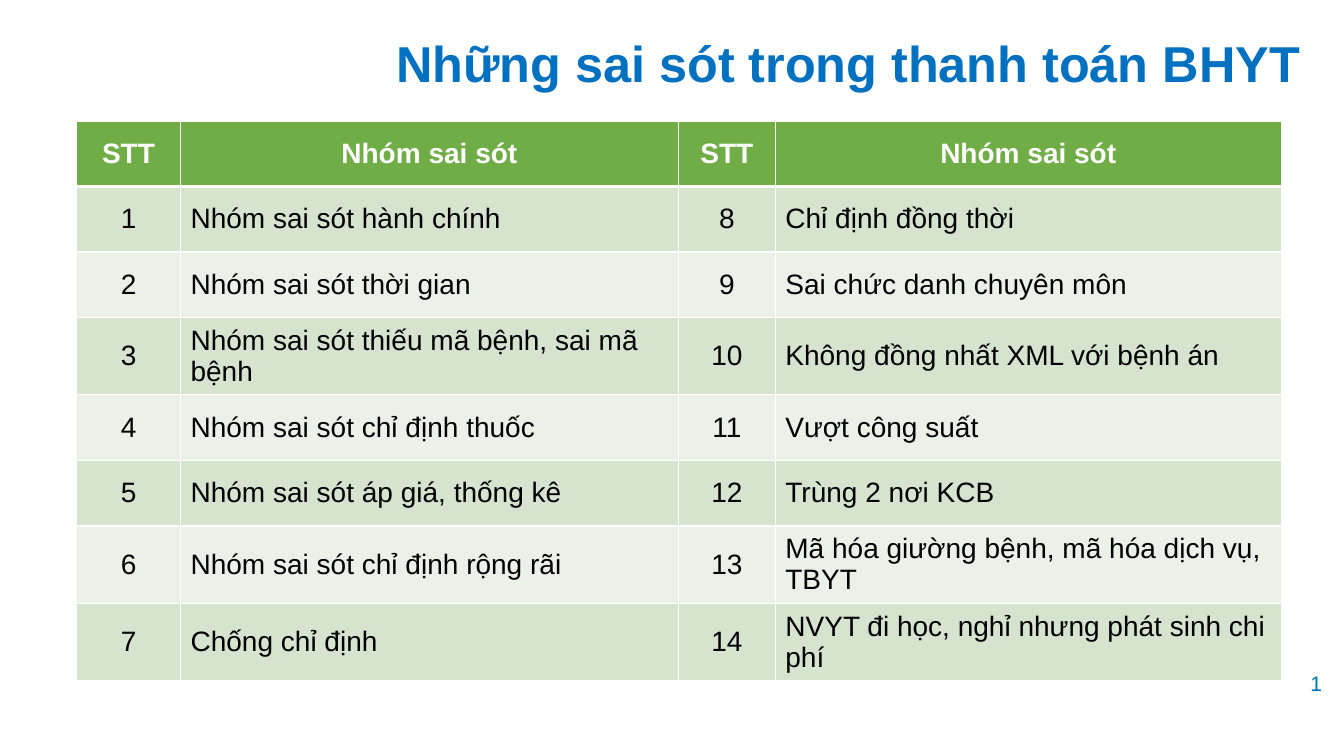
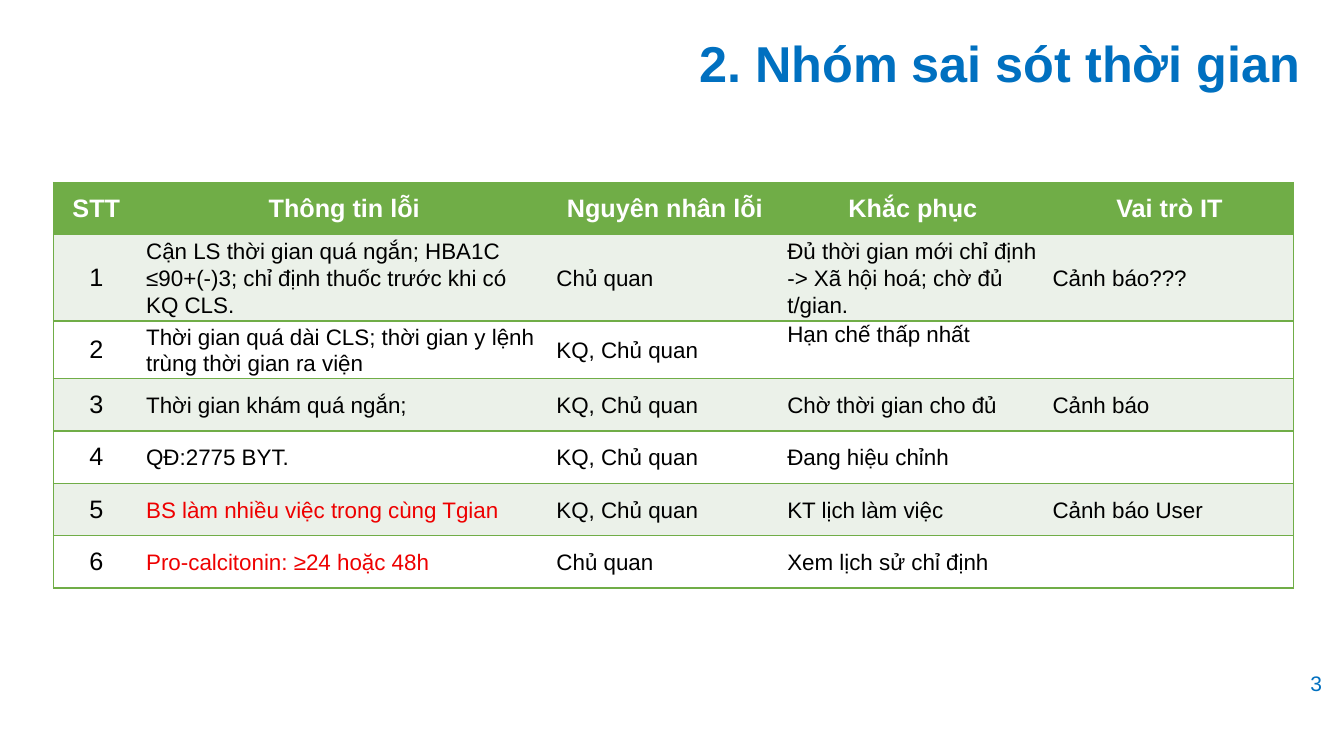
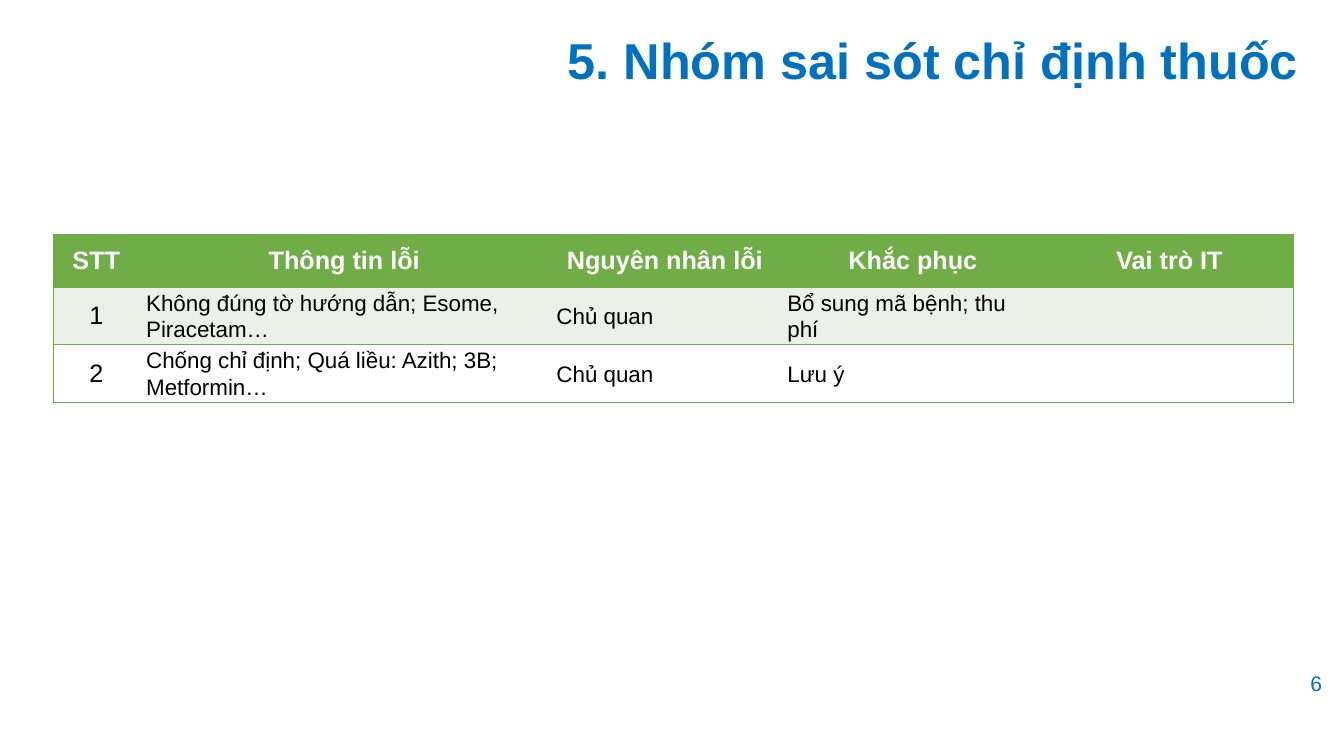
"""Build three slides on common errors in health insurance payment claims."""
from lxml import etree
from pptx import Presentation
from pptx.dml.color import RGBColor
from pptx.enum.text import MSO_ANCHOR, PP_ALIGN
from pptx.oxml.ns import qn
from pptx.util import Inches, Pt

LEFT, CENTER, RIGHT = PP_ALIGN.LEFT, PP_ALIGN.CENTER, PP_ALIGN.RIGHT
TOP, MIDDLE = MSO_ANCHOR.TOP, MSO_ANCHOR.MIDDLE

BLUE = RGBColor(0x00, 0x70, 0xC0)
GREEN = RGBColor(0x70, 0xAD, 0x47)
MID_GREEN = RGBColor(0xD5, 0xE3, 0xCF)
PALE_GREEN = RGBColor(0xEB, 0xF1, 0xE9)
WHITE = RGBColor(0xFF, 0xFF, 0xFF)
BLACK = RGBColor(0x00, 0x00, 0x00)
RED = RGBColor(0xEE, 0x00, 0x00)

TITLE_FONT = {"size": Pt(36), "bold": True}
NUMBER_FONT = {"size": Pt(15), "bold": False}
TIGHT_MARGINS = {
    "margin_left": Inches(0.07), "margin_right": Inches(0.07),
    "margin_top": 0, "margin_bottom": 0,
}

GROUPS = [
    "Nhóm sai sót hành chính",
    "Nhóm sai sót thời gian",
    "Nhóm sai sót thiếu mã bệnh, sai mã bệnh",
    "Nhóm sai sót chỉ định thuốc",
    "Nhóm sai sót áp giá, thống kê",
    "Nhóm sai sót chỉ định rộng rãi",
    "Chống chỉ định",
    "Chỉ định đồng thời",
    "Sai chức danh chuyên môn",
    "Không đồng nhất XML với bệnh án",
    "Vượt công suất",
    "Trùng 2 nơi KCB",
    "Mã hóa giường bệnh, mã hóa dịch vụ, TBYT",
    "NVYT đi học, nghỉ nhưng phát sinh chi phí",
]
ERROR_HEADINGS = ["STT", "Thông tin lỗi", "Nguyên nhân lỗi", "Khắc phục", "Vai trò IT"]
TIME_ERRORS = [
    ["Cận LS thời gian quá ngắn; HBA1C ≤90+(-)3; chỉ định thuốc trước khi có KQ CLS.",
     "Chủ quan", "Đủ thời gian mới chỉ định -> Xã hội hoá; chờ đủ t/gian.", "Cảnh báo???"],
    ["Thời gian quá dài CLS; thời gian y lệnh trùng thời gian ra viện",
     "KQ, Chủ quan", "Hạn chế thấp nhất", ""],
    ["Thời gian khám quá ngắn;", "KQ, Chủ quan", "Chờ thời gian cho đủ", "Cảnh báo"],
    ["QĐ:2775 BYT.", "KQ, Chủ quan", "Đang hiệu chỉnh", ""],
    ["BS làm nhiều việc trong cùng Tgian", "KQ, Chủ quan", "KT lịch làm việc",
     "Cảnh báo User"],
    ["Pro-calcitonin: ≥24 hoặc 48h", "Chủ quan", "Xem lịch sử chỉ định", ""],
]
DRUG_ERRORS = [
    ["Không đúng tờ hướng dẫn; Esome, Piracetam…", "Chủ quan",
     "Bổ sung mã bệnh; thu phí", ""],
    ["Chống chỉ định; Quá liều: Azith; 3B; Metformin…", "Chủ quan", "Lưu ý", ""],
]
RED_ROWS = (5, 6)
TOP_ALIGNED_TEXT = "Hạn chế thấp nhất"


def apply(target, values):
    """Set each named attribute on the target."""
    for name, value in values.items():
        setattr(target, name, value)


def write(frame, text, align, color, font):
    """Write one formatted paragraph and return it."""
    paragraph = frame.paragraphs[0]
    paragraph.alignment = align
    run = paragraph.add_run()
    run.text = text
    apply(run.font, {"name": "Arial", **font})
    run.font.color.rgb = color
    return paragraph


def add_text(slide, place, text, align, anchor, font):
    """Add a blue text box."""
    frame = slide.shapes.add_textbox(*map(Inches, place)).text_frame
    apply(frame, {"word_wrap": True, "vertical_anchor": anchor, "margin_top": Inches(0.1),
                  "margin_bottom": Inches(0.1)})
    write(frame, text, align, BLUE, font)


def add_page(deck, title, number, title_place=(2.66, 0.22, 10.34, 0.76)):
    """Add a slide with its title and page number."""
    slide = deck.slides.add_slide(deck.slide_layouts[6])
    add_text(slide, (12.78, 6.58, 0.55, 0.39), number, CENTER, MIDDLE, NUMBER_FONT)
    add_text(slide, title_place, title, RIGHT, TOP, TITLE_FONT)
    return slide


def set_borders(cell, borders):
    """Draw the four cell borders; a missing side has no line."""
    properties = cell._tc.get_or_add_tcPr()
    for side in "LRTB":
        color, width = borders.get(side, (None, 1))
        line = etree.SubElement(properties, qn(f"a:ln{side}"), w=str(Pt(width)))
        if color is None:
            etree.SubElement(line, qn("a:noFill"))
        else:
            fill = etree.SubElement(line, qn("a:solidFill"))
            etree.SubElement(fill, qn("a:srgbClr"), val=str(color))


def add_grid(slide, place, widths, row_height, rows, bands, borders_at):
    """Add a table with a green header and banded rows, and return it."""
    left, top = place
    table = slide.shapes.add_table(
        len(rows), len(widths), Inches(left), Inches(top),
        Inches(sum(widths)), Inches(row_height * len(rows))).table
    for column, width in zip(table.columns, widths):
        column.width = Inches(width)
    for r, row in enumerate(table.rows):
        row.height = Inches(row_height)
        for c, cell in enumerate(row.cells):
            set_borders(cell, borders_at(r, c))
            cell.fill.solid()
            cell.fill.fore_color.rgb = bands[(r - 1) % 2] if r else GREEN
            cell.vertical_anchor = MIDDLE
    return table


def fill_cell(cell, text, size, is_header, align, color=BLACK):
    """Write one table cell and return its paragraph."""
    return write(cell.text_frame, text, CENTER if is_header else align,
                 WHITE if is_header else color, {"size": Pt(size), "bold": is_header})


def add_group_table(slide):
    """Add the numbered overview of error groups in two halves."""
    half = len(GROUPS) // 2
    rows = [["STT", "Nhóm sai sót"] * 2]
    for i in range(half):
        rows.append([str(i + 1), GROUPS[i], str(i + half + 1), GROUPS[i + half]])

    def borders_at(r, c):
        """White lines, thicker under the header."""
        borders = dict.fromkeys("LRTB", (WHITE, 1))
        if r < 2:
            borders["T" if r else "B"] = (WHITE, 3)
        return borders

    table = add_grid(slide, (0.76, 1.2), (1.03, 4.94, 0.96, 5.02), 0.65, rows,
                     (MID_GREEN, PALE_GREEN), borders_at)
    for r, row in enumerate(rows):
        for c, text in enumerate(row):
            fill_cell(table.cell(r, c), text, 20, r == 0, LEFT if c % 2 else CENTER)


def add_error_table(slide, top, errors, red_rows=()):
    """Add a table of errors, causes, remedies and the role of IT."""
    rows = [ERROR_HEADINGS] + [[str(i), *error] for i, error in enumerate(errors, 1)]
    last = len(ERROR_HEADINGS) - 1

    def borders_at(r, c):
        """Green row lines and outer sides."""
        sides = "TB" + "L" * (c == 0) + "R" * (c == last)
        return dict.fromkeys(sides, (GREEN, 1))

    table = add_grid(slide, (0.53, top), (0.85, 4.07, 2.29, 2.63, 2.46), 0.52, rows,
                     (PALE_GREEN, WHITE), borders_at)
    for r, row in enumerate(rows):
        for c, text in enumerate(row):
            if not text:
                continue
            cell = table.cell(r, c)
            is_detail = r > 0 and c > 0
            color = RED if r in red_rows and c == 1 else BLACK
            paragraph = fill_cell(cell, text, 16 if is_detail else 18, r == 0,
                                  LEFT if is_detail else CENTER, color)
            if is_detail:
                paragraph.line_spacing = 1.07
                apply(cell, TIGHT_MARGINS)
            if text == TOP_ALIGNED_TEXT:
                cell.vertical_anchor = TOP


def main():
    """Build and save the deck."""
    deck = Presentation()
    apply(deck, {"slide_width": Inches(13.33), "slide_height": Inches(7.5)})
    add_group_table(add_page(deck, "Những sai sót trong thanh toán BHYT", "1"))
    add_error_table(add_page(deck, "2. Nhóm sai sót thời gian", "3"),
                    1.81, TIME_ERRORS, RED_ROWS)
    add_error_table(add_page(deck, "5. Nhóm sai sót chỉ định thuốc", "6",
                             (2.66, 0.19, 10.32, 0.88)), 2.33, DRUG_ERRORS)
    deck.save("out.pptx")


if __name__ == "__main__":
    main()
